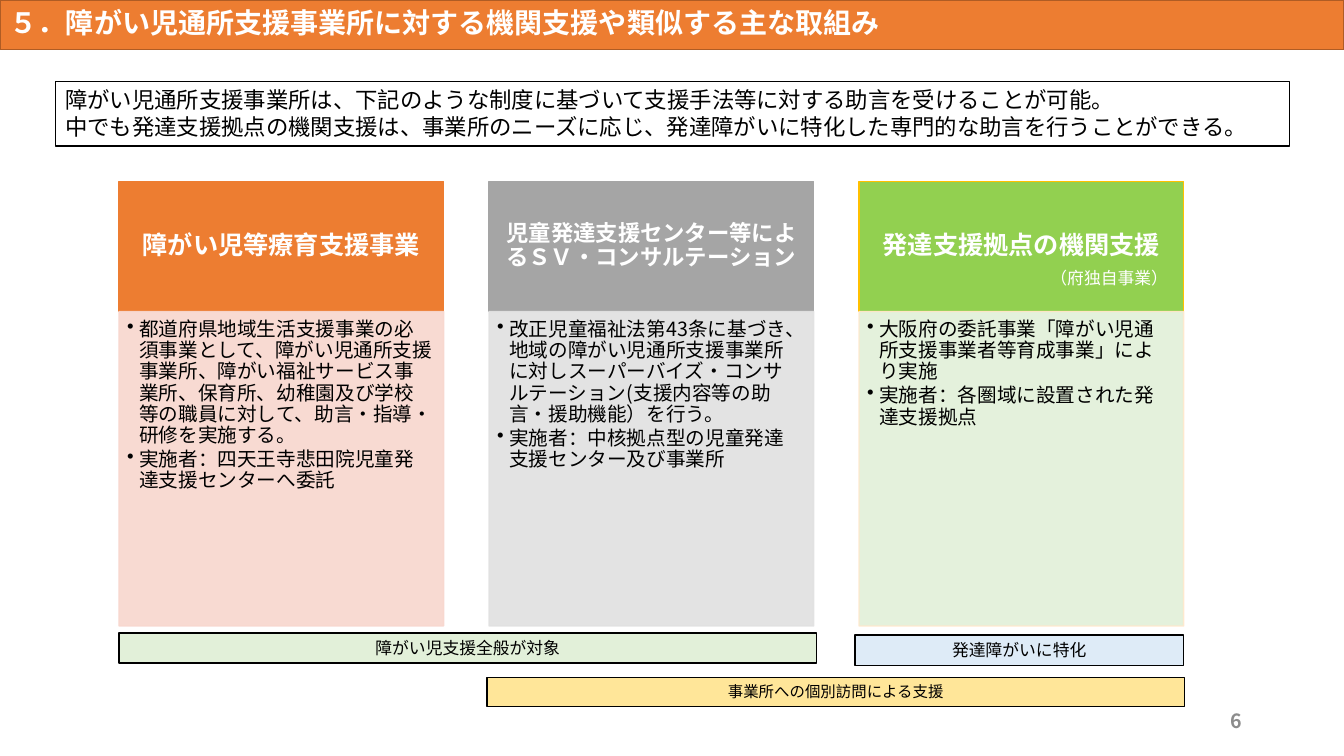
import pptx
import pptx.util
import pptx.dml.color
import pptx.enum.shapes
import pptx.enum.text
import pptx.oxml.ns
import lxml.etree

FONT = "Noto Sans CJK JP"
COLORS = {
    "orange": "ED7D31", "rust": "AF5C24", "pink": "F8D7CE",
    "grey": "A5A5A5", "silver": "E1E1E1", "number": "8C8C8C",
    "green": "92D050", "mint": "E2F0D9", "amber": "FFC000", "cream": "FFE8CC",
    "yellow": "FFE699", "sky": "DEEBF7", "white": "FFFFFF", "black": "000000",
}
ALIGN = pptx.enum.text.PP_ALIGN
ANCHOR = pptx.enum.text.MSO_ANCHOR
INCH = pptx.util.Inches
POINT = pptx.util.Pt

deck = pptx.Presentation()
deck.slide_width, deck.slide_height = INCH(13.33), INCH(7.5)
page = deck.slides.add_slide(deck.slide_layouts[6])


def add_box(area, fill=None, line=None, alpha=None):
    """Add a rectangle, or a plain text box when no fill is given."""
    area = [INCH(length) for length in area]
    if fill is None:
        return page.shapes.add_textbox(*area)
    box = page.shapes.add_shape(pptx.enum.shapes.MSO_SHAPE.RECTANGLE, *area)
    box.shadow.inherit = False
    box.fill.solid()
    box.line.fill.solid()
    box.line.width = POINT(1)
    for paint, color in ((box.fill, fill), (box.line.fill, line)):
        paint.fore_color.rgb = pptx.dml.color.RGBColor.from_string(COLORS[color])
    if alpha:
        for color in box._element.spPr.iter(pptx.oxml.ns.qn("a:srgbClr")):
            lxml.etree.SubElement(color, pptx.oxml.ns.qn("a:alpha"), val=str(alpha * 1000))
    return box


def write(box, lines, size, color="black", bold=False, bullet=False,
          anchor=ANCHOR.TOP, margins=(0.1, 0.05, 0.1, 0.05), **layout):
    """Fill a box with paragraphs; layout holds paragraph attributes."""
    frame = box.text_frame
    frame.word_wrap = True
    frame.vertical_anchor = anchor
    for side, margin in zip(("left", "top", "right", "bottom"), margins):
        setattr(frame, f"margin_{side}", INCH(margin))
    for index, line in enumerate(lines):
        para = frame.paragraphs[0] if index == 0 else frame.add_paragraph()
        for name, value in {"alignment": ALIGN.LEFT, **layout}.items():
            setattr(para, name, value)
        if bullet:
            para.level = 1
            properties = para._p.get_or_add_pPr()
            properties.set("marL", str(INCH(0.12)))
            properties.set("indent", str(INCH(-0.12)))
            lxml.etree.SubElement(properties, pptx.oxml.ns.qn("a:buChar"), char="•")
        span = para.add_run()
        span.text = line
        for name, value in {"name": FONT, "size": POINT(size), "bold": bold}.items():
            setattr(span.font, name, value)
        span.font.color.rgb = pptx.dml.color.RGBColor.from_string(COLORS[color])
        lxml.etree.SubElement(span._r.get_or_add_rPr(), pptx.oxml.ns.qn("a:ea"), typeface=FONT)


# Title bar and page number
write(add_box((0, 0, 13.33, 0.49), "orange", "rust"),
      ["５．障がい児通所支援事業所に対する機関支援や類似する主な取組み"],
      20, "white", bold=True, anchor=ANCHOR.MIDDLE, line_spacing=0.9)
write(add_box((9.42, 6.95, 3, 0.4)), ["6"], 14, "number", bold=True,
      anchor=ANCHOR.MIDDLE, alignment=ALIGN.RIGHT)

# Introduction
write(add_box((0.55, 0.81, 12.24, 0.64), "white", "black"), [
    "障がい児通所支援事業所は、下記のような制度に基づいて支援手法等に対する助言を受けることが可能。",
    "中でも発達支援拠点の機関支援は、事業所のニーズに応じ、発達障がいに特化した専門的な助言を行うことができる。",
], 16)

# Three support schemes: heading above, details below
LEFT, STEP, WIDTH = 1.18, 3.67, 3.22
TOP, HEAD, BODY = 1.8, 1.29, 3.12
schemes = [
    ("障がい児等療育支援事業", 18, "orange", "orange", "pink", "pink", [
        "都道府県地域生活支援事業の必須事業として、障がい児通所支援事業所、障がい福祉サービス事業所、"
        "保育所、幼稚園及び学校等の職員に対して、助言・指導・研修を実施する。",
        "実施者：四天王寺悲田院児童発達支援センターへ委託",
    ]),
    ("児童発達支援センター等によるＳＶ・コンサルテーション", 16, "grey", "grey", "silver", "silver", [
        "改正児童福祉法第43条に基づき、地域の障がい児通所支援事業所に対し"
        "スーパーバイズ・コンサルテーション(支援内容等の助言・援助機能）を行う。",
        "実施者：中核拠点型の児童発達支援センター及び事業所",
    ]),
    ("発達支援拠点の機関支援", 18, "green", "amber", "mint", "cream", [
        "大阪府の委託事業「障がい児通所支援事業者等育成事業」により実施",
        "実施者：各圏域に設置された発達支援拠点",
    ]),
]
for column, (heading, size, fill, line, tint, edge, details) in enumerate(schemes):
    left = LEFT + column * STEP
    write(add_box((left, TOP, WIDTH, HEAD), fill, line), [heading], size, "white", bold=True,
          anchor=ANCHOR.MIDDLE, margins=(0.14, 0.08, 0.14, 0.08) if size == 18 else (0.12, 0.07, 0.12, 0.07),
          alignment=ALIGN.CENTER, line_spacing=0.9)
    write(add_box((left, TOP + HEAD, WIDTH, BODY), tint, edge, alpha=90), details, 14,
          bullet=True, margins=(0.08, 0.08, 0.11, 0.12), line_spacing=0.9, space_after=POINT(2))
write(add_box((10.32, 2.61, 1.42, 0.3)), ["（府独自事業）"], 12, "white")

# Scope bars under the columns
for label, size, fill, area in [
    ("事業所への個別訪問による支援", 11, "yellow", (4.83, 6.72, 6.92, 0.29)),
    ("発達障がいに特化", 12, "sky", (8.48, 6.3, 3.26, 0.3)),
    ("障がい児支援全般が対象", 12, "mint", (1.18, 6.28, 6.92, 0.3)),
]:
    write(add_box(area, fill, "black"), [label], size, alignment=ALIGN.CENTER)

deck.save("out.pptx")
